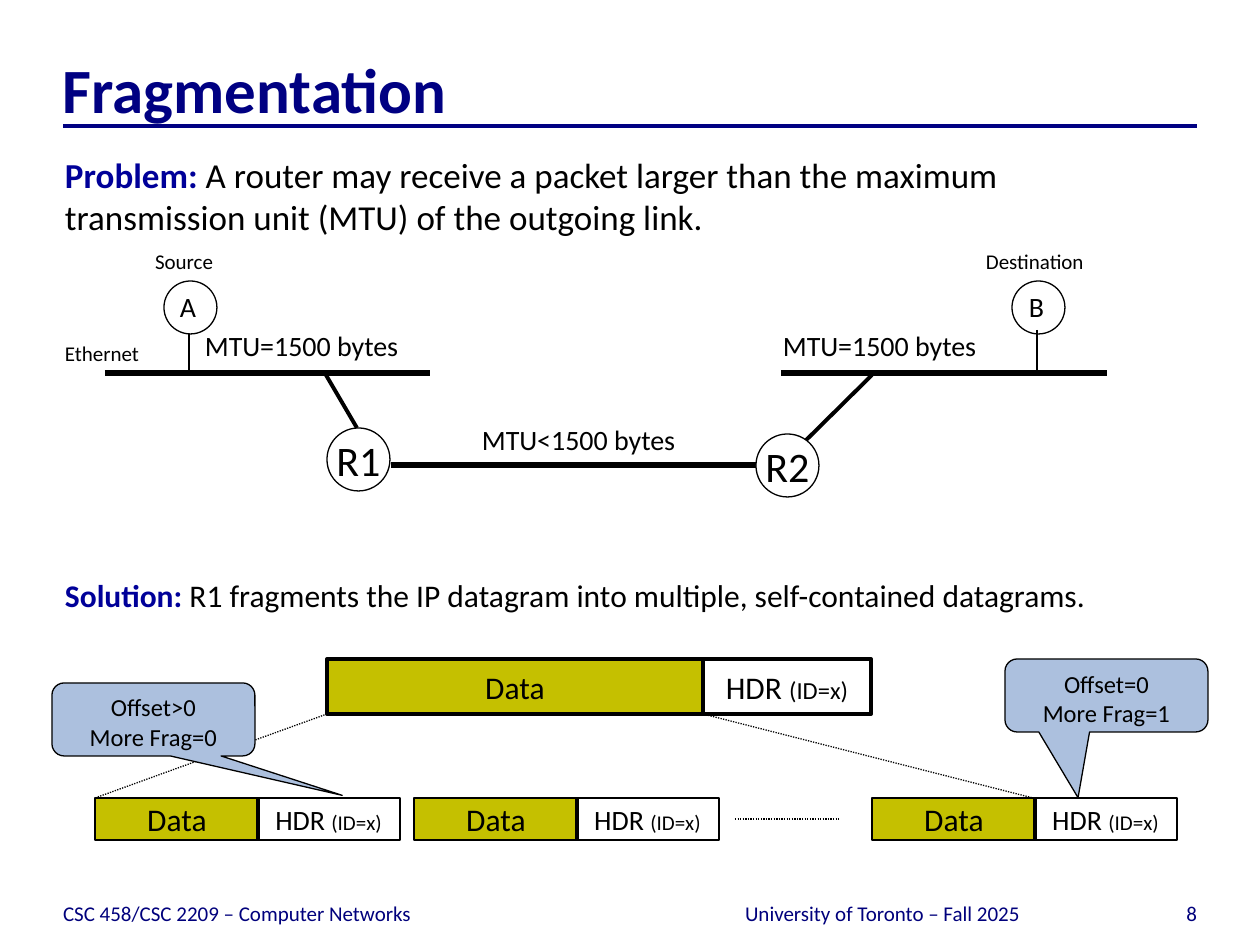
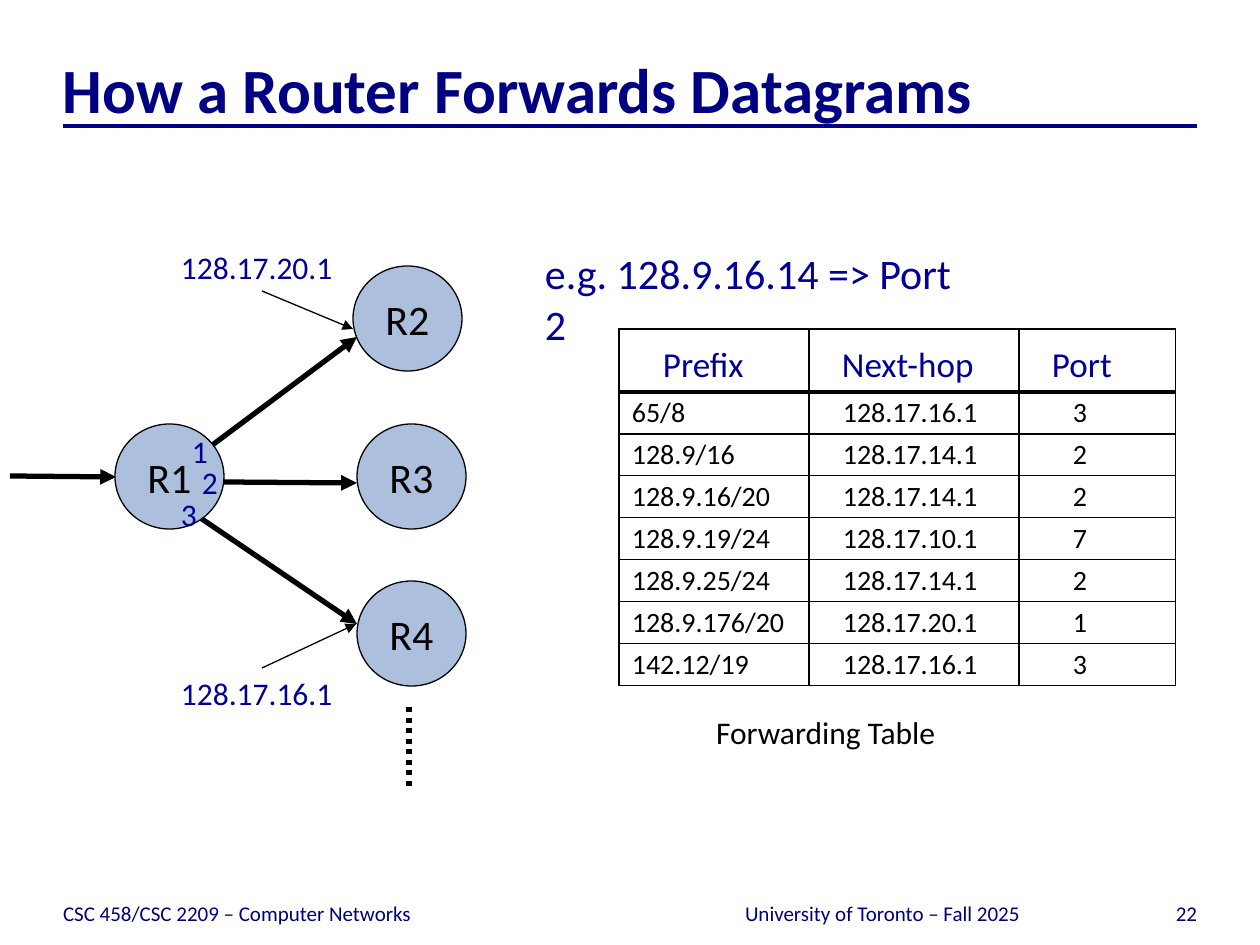
from dataclasses import dataclass

from lxml import etree
from pptx import Presentation
from pptx import util as u
from pptx.dml.color import RGBColor
from pptx.enum import dml, shapes, text
from pptx.oxml import ns


@dataclass(frozen=True)
class Theme:
    font: str = "Calibri"
    title: str = "000082"
    footer: str = "00007C"
    accent: str = "000099"
    ink: str = "000000"
    paper: str = "FFFFFF"
    data: str = "C5C000"
    node: str = "ACC0DE"
    title_size: int = 36
    big: int = 24
    lead: int = 20
    body: int = 18
    label: int = 16
    note: int = 14
    small: int = 12
    thin: float = 0.75
    medium: float = 1.5
    thick: float = 2.25
    heavy: float = 3


T = Theme()
PX = 914400 / 126
KIND = shapes.MSO_SHAPE
AL = text.PP_ALIGN
ANC = text.MSO_ANCHOR
DOT = dml.MSO_LINE.ROUND_DOT


def box(s, at, paras, kind=None, fill=None, width=T.thin, al=AL.LEFT,
        anc=ANC.TOP, wrap=True, ins=(13, 6, 13, 6)):
    at = [round(v * PX) for v in at]
    if kind is None:
        sp = s.shapes.add_textbox(*at)
    else:
        sp = s.shapes.add_shape(kind, *at)
        sp.shadow.inherit = False
        if fill:
            sp.fill.solid()
            sp.fill.fore_color.rgb = RGBColor.from_string(fill)
        else:
            sp.fill.background()
        sp.line.color.rgb = RGBColor.from_string(T.ink)
        sp.line.width = u.Pt(width)
    tf = sp.text_frame
    tf.word_wrap = wrap
    tf.vertical_anchor = anc
    tf.margin_left, tf.margin_top, tf.margin_right, tf.margin_bottom = [
        round(v * PX) for v in ins]
    for i, runs in enumerate(paras):
        p = tf.add_paragraph() if i else tf.paragraphs[0]
        p.alignment = al
        for words, size, color, bold in runs:
            r = p.add_run()
            r.text = words
            r.font.name = T.font
            r.font.size = u.Pt(size)
            r.font.bold = bold
            r.font.color.rgb = RGBColor.from_string(color)
    return sp


def line(s, x1, y1, x2, y2, width=T.thin, color=T.ink, dash=None, arrow=False):
    c = s.shapes.add_connector(shapes.MSO_CONNECTOR.STRAIGHT,
                               *[round(v * PX) for v in (x1, y1, x2, y2)])
    c.line.color.rgb = RGBColor.from_string(color)
    c.line.width = u.Pt(width)
    if dash:
        c.line.dash_style = dash
    if arrow:
        etree.SubElement(c.line._get_or_add_ln(), ns.qn("a:tailEnd"), type="triangle")
    etree.SubElement(c._element.spPr, ns.qn("a:effectLst"))


prs = Presentation()
prs.slide_width, prs.slide_height = u.Inches(10), u.Inches(7.5)

slides = []
for title, number in [("Fragmentation", "8"), ("How a Router Forwards Datagrams", "22")]:
    s = prs.slides.add_slide(prs.slide_layouts[6])
    line(s, 63, 126, 1197, 126, T.thick, T.title)
    box(s, (63, 42, 1134, 84), [[(title, T.title_size, T.title, True)]],
        anc=ANC.BOTTOM, ins=(0, 6, 0, 0))
    for x, w, words, al in [
        (63, 609, "CSC 458/CSC 2209 – Computer Networks", AL.LEFT),
        (1092, 105, number, AL.RIGHT),
        (683, 399, "University of Toronto – Fall 2025", AL.CENTER),
    ]:
        box(s, (x, 876, w, 50), [[(words, T.small, T.footer, False)]],
            al=al, anc=ANC.BOTTOM, ins=(0, 0, 0, 0))
    slides.append(s)

s = slides[0]
for y, w, h, size, lead, words in [
    (147, 1129, 97, T.lead, "Problem:",
     " A router may receive a packet larger than the maximum transmission unit (MTU) of the outgoing link."),
    (570, 1180, 50, T.body, "Solution:",
     " R1 fragments the IP datagram into multiple, self-contained datagrams."),
]:
    box(s, (52, y, w, h), [[(lead, size, T.accent, True), (words, size, T.ink, False)]])

for x, name, letter_x, stem_x, stem_y in [(164, "A", 167, 189, 334), (1012, "B", 1016, 1037, 330)]:
    box(s, (x, 281, 53, 53), [], KIND.OVAL)
    box(s, (letter_x, 284, 60, 46), [[(name, T.label, T.ink, False)]])
    line(s, stem_x, stem_y, stem_x, 373)
for x1, y1, x2, y2, width in [
    (105, 373, 430, 373, T.heavy),
    (781, 373, 1107, 373, T.heavy),
    (326, 375, 357, 428, T.thick),
    (872, 375, 781, 465, T.thick),
    (391, 465, 756, 465, T.heavy),
]:
    line(s, x1, y1, x2, y2, width)
for x, y, w, h, words, size in [
    (142, 242, 134, 38, "Source", T.small),
    (973, 242, 203, 38, "Destination", T.small),
    (52, 332, 136, 42, "Ethernet", T.small),
    (192, 314, 266, 63, "MTU=1500 bytes", T.label),
    (770, 314, 266, 63, "MTU=1500 bytes", T.label),
    (469, 408, 266, 63, "MTU<1500 bytes", T.label),
]:
    box(s, (x, y, w, h), [[(words, size, T.ink, False)]], anc=ANC.MIDDLE)
for x, y, name in [(327, 428, "R1"), (756, 434, "R2")]:
    box(s, (x, y, 63, 63), [[(name, T.big, T.ink, False)]], KIND.OVAL, T.paper,
        al=AL.CENTER, anc=ANC.MIDDLE, wrap=False)

datagrams = [(327, 659, 55, 376, 376, 168, T.body, T.note, T.thick)]
datagrams += [(x, 798, 42, 164, 162, 143, T.label, T.small, T.thin) for x in (95, 414, 872)]
for x, y, h, data_w, hdr_dx, hdr_w, hdr_size, id_size, width in datagrams:
    box(s, (x, y, data_w, h), [[("Data", T.body, T.ink, False)]], KIND.RECTANGLE,
        T.data, width, AL.CENTER, ANC.MIDDLE, False)
    box(s, (x + hdr_dx, y, hdr_w, h),
        [[("HDR ", hdr_size, T.ink, False), ("(ID=x)", id_size, T.ink, False)]],
        KIND.RECTANGLE, None, width, AL.CENTER, ANC.MIDDLE, False)
for ends in [(327, 714, 95, 798), (703, 714, 1033, 798), (735, 819, 840, 819)]:
    line(s, *ends, dash=DOT)
for x, y, tip, lines in [
    (52, 683, (0.93, 1.04), ("Offset>0", "More Frag=0")),
    (1005, 659, (-0.14, 1.4), ("Offset=0", "More Frag=1")),
]:
    sp = box(s, (x, y, 203, 73), [[(words, T.note, T.ink, False)] for words in lines],
             KIND.ROUNDED_RECTANGULAR_CALLOUT, T.node, al=AL.CENTER)
    sp.adjustments[0], sp.adjustments[1] = tip

s = slides[1]
box(s, (532, 242, 445, 110), [[("e.g. 128.9.16.14 => Port 2", T.big, T.accent, False)]])

rows = [
    ("Prefix", "Next-hop", "Port"),
    ("65/8", "128.17.16.1", "3"),
    ("128.9/16", "128.17.14.1", "2"),
    ("128.9.16/20", "128.17.14.1", "2"),
    ("128.9.19/24", "128.17.10.1", "7"),
    ("128.9.25/24", "128.17.14.1", "2"),
    ("128.9.176/20", "128.17.20.1", "1"),
    ("142.12/19", "128.17.16.1", "3"),
]
widths = (190, 210, 157)
heads = (44, 33, 33)
indents = (13, 34, 54)
tbl = s.shapes.add_table(len(rows), len(widths),
                         *[round(v * PX) for v in (619, 329, 557, 357)]).table
tbl.first_row = tbl.horz_banding = False
for j, w in enumerate(widths):
    tbl.columns[j].width = round(w * PX)
for i, row in enumerate(rows):
    tbl.rows[i].height = round((42 if i else 63) * PX)
    for j, words in enumerate(row):
        cell = tbl.cell(i, j)
        cell.margin_left = round((indents if i else heads)[j] * PX)
        cell.margin_right = cell.margin_bottom = 0
        cell.margin_top = round((0 if i else 10) * PX)
        cell.vertical_anchor = ANC.MIDDLE
        r = cell.text_frame.paragraphs[0].add_run()
        r.text = words
        r.font.name = T.font
        r.font.size = u.Pt(T.label if i else T.lead)
        r.font.color.rgb = RGBColor.from_string(T.ink if i else T.accent)
        borders = {
            "a:lnL": T.medium if j == 1 else T.thin,
            "a:lnR": T.medium if j == 0 else T.thin,
            "a:lnT": T.thick if i == 1 else T.thin,
            "a:lnB": T.thick if i == 0 else T.thin,
        }
        for side, width in borders.items():
            ln = etree.SubElement(cell._tc.get_or_add_tcPr(), ns.qn(side), w=str(u.Pt(width)))
            solid = etree.SubElement(ln, ns.qn("a:solidFill"))
            etree.SubElement(solid, ns.qn("a:srgbClr"), val=T.ink)
        cell.fill.background()

box(s, (703, 707, 260, 50), [[("Forwarding Table", T.body, T.ink, False)]])

line(s, 409, 707, 409, 791, T.heavy, dash=DOT)
for ends in [(10, 476, 116, 477), (199, 455, 357, 337), (224, 482, 357, 483), (199, 517, 357, 624)]:
    line(s, *ends, T.heavy, arrow=True)
for x, y, name in [(115, 424, "R1"), (353, 266, "R2"), (357, 424, "R3"), (357, 581, "R4")]:
    box(s, (x, y, 109, 105), [[(name, T.big, T.ink, False)]], KIND.OVAL, T.node,
        al=AL.CENTER, anc=ANC.MIDDLE, wrap=False)
for x, y, w, words in [
    (179, 426, 60, "1"),
    (189, 457, 60, "2"),
    (168, 489, 60, "3"),
    (168, 242, 190, "128.17.20.1"),
    (168, 668, 190, "128.17.16.1"),
]:
    box(s, (x, y, w, 50), [[(words, T.body, T.accent, False)]])
for ends in [(262, 291, 353, 329), (262, 668, 356, 624)]:
    line(s, *ends, arrow=True)

prs.save("out.pptx")
